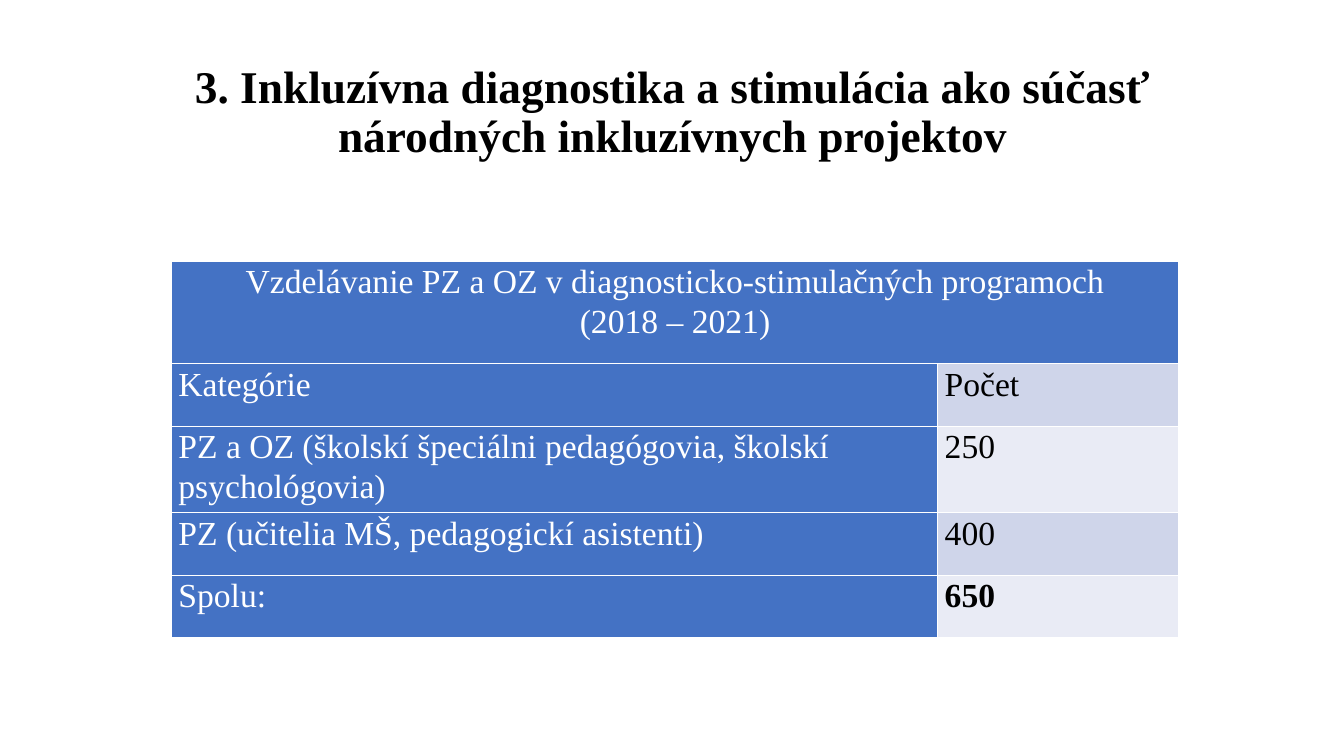
from lxml import etree
from pptx import Presentation
from pptx.dml.color import RGBColor
from pptx.enum.text import MSO_ANCHOR, PP_ALIGN
from pptx.oxml.ns import qn
from pptx.util import Inches, Pt

CENTER, LEFT = PP_ALIGN.CENTER, PP_ALIGN.LEFT
MIDDLE, TOP = MSO_ANCHOR.MIDDLE, MSO_ANCHOR.TOP
COLORS = {"black": "000000", "white": "FFFFFF", "blue": "4472C4",
          "band_dark": "CFD5EA", "band_light": "E9EBF5"}
FONT = "Times New Roman"
SLIDE_W, SLIDE_H = 13.33, 7.5
TITLE_BOX = (0.92, 0.4, 11.5, 1.45)
TABLE_LEFT, TABLE_TOP = 1.7, 2.59
COL_WIDTHS = (7.6, 2.39)
ROW_HEIGHTS = (1.02, 0.62, 0.81, 0.62, 0.62)

TITLE = "3. Inkluzívna diagnostika a stimulácia ako súčasť národných inkluzívnych projektov"
HEADING = "Vzdelávanie PZ a OZ v diagnosticko-stimulačných programoch\n(2018 – 2021)"
ROWS = (
    ("Kategórie", "Počet"),
    ("PZ a OZ (školskí špeciálni pedagógovia, školskí psychológovia)", "250"),
    ("PZ (učitelia MŠ, pedagogickí asistenti)", "400"),
    ("Spolu:", "650"),
)


def write_text(tf, text, size=24, color="black", bold=False, align=LEFT, spacing=1.07):
    """Write each line of text as a formatted paragraph."""
    tf.word_wrap = True
    for i, line in enumerate(text.split("\n")):
        p = tf.add_paragraph() if i else tf.paragraphs[0]
        p.alignment, p.line_spacing = align, spacing
        r = p.add_run()
        r.text = line
        r.font.name, r.font.size, r.font.bold = FONT, Pt(size), bold
        r.font.color.rgb = RGBColor.from_string(COLORS[color])


def set_borders(cell, color="white", width=1):
    """Draw a solid line on all four sides of a cell."""
    tcPr = cell._tc.get_or_add_tcPr()
    for i, side in enumerate(("a:lnL", "a:lnR", "a:lnT", "a:lnB")):
        ln = etree.Element(qn(side), w=str(Pt(width)))
        fill = etree.SubElement(ln, qn("a:solidFill"))
        etree.SubElement(fill, qn("a:srgbClr"), val=COLORS[color])
        tcPr.insert(i, ln)


def style_cell(cell, fill):
    """Set the fill, margins, anchor and borders of a cell."""
    cell.fill.solid()
    cell.fill.fore_color.rgb = RGBColor.from_string(COLORS[fill])
    cell.margin_left = cell.margin_right = Inches(0.07)
    cell.margin_top = cell.margin_bottom = 0
    cell.vertical_anchor = TOP
    set_borders(cell)


def add_title(s):
    """Add the centred slide title."""
    tf = s.shapes.add_textbox(*map(Inches, TITLE_BOX)).text_frame
    tf.vertical_anchor = MIDDLE
    write_text(tf, TITLE, size=32.4, bold=True, align=CENTER, spacing=0.9)


def add_training_table(s):
    """Add the table of trained staff under a merged heading."""
    box = (TABLE_LEFT, TABLE_TOP, sum(COL_WIDTHS), sum(ROW_HEIGHTS))
    table = s.shapes.add_table(len(ROW_HEIGHTS), len(COL_WIDTHS), *map(Inches, box)).table
    for col, width in zip(table.columns, COL_WIDTHS):
        col.width = Inches(width)
    for row, height in zip(table.rows, ROW_HEIGHTS):
        row.height = Inches(height)

    heading = table.cell(0, 0)
    heading.merge(table.cell(0, 1))
    for cell in table.rows[0].cells:
        style_cell(cell, "blue")
    write_text(heading.text_frame, HEADING, color="white", align=CENTER)

    for i, (category, count) in enumerate(ROWS, start=1):
        label, value = table.rows[i].cells
        style_cell(label, "blue")
        style_cell(value, "band_dark" if i % 2 else "band_light")
        write_text(label.text_frame, category, color="white")
        write_text(value.text_frame, count, bold=i == len(ROWS))


def main():
    """Build the slide and save it."""
    prs = Presentation()
    prs.slide_width, prs.slide_height = Inches(SLIDE_W), Inches(SLIDE_H)
    s = prs.slides.add_slide(prs.slide_layouts[6])
    add_title(s)
    add_training_table(s)
    prs.save("out.pptx")


if __name__ == "__main__":
    main()
